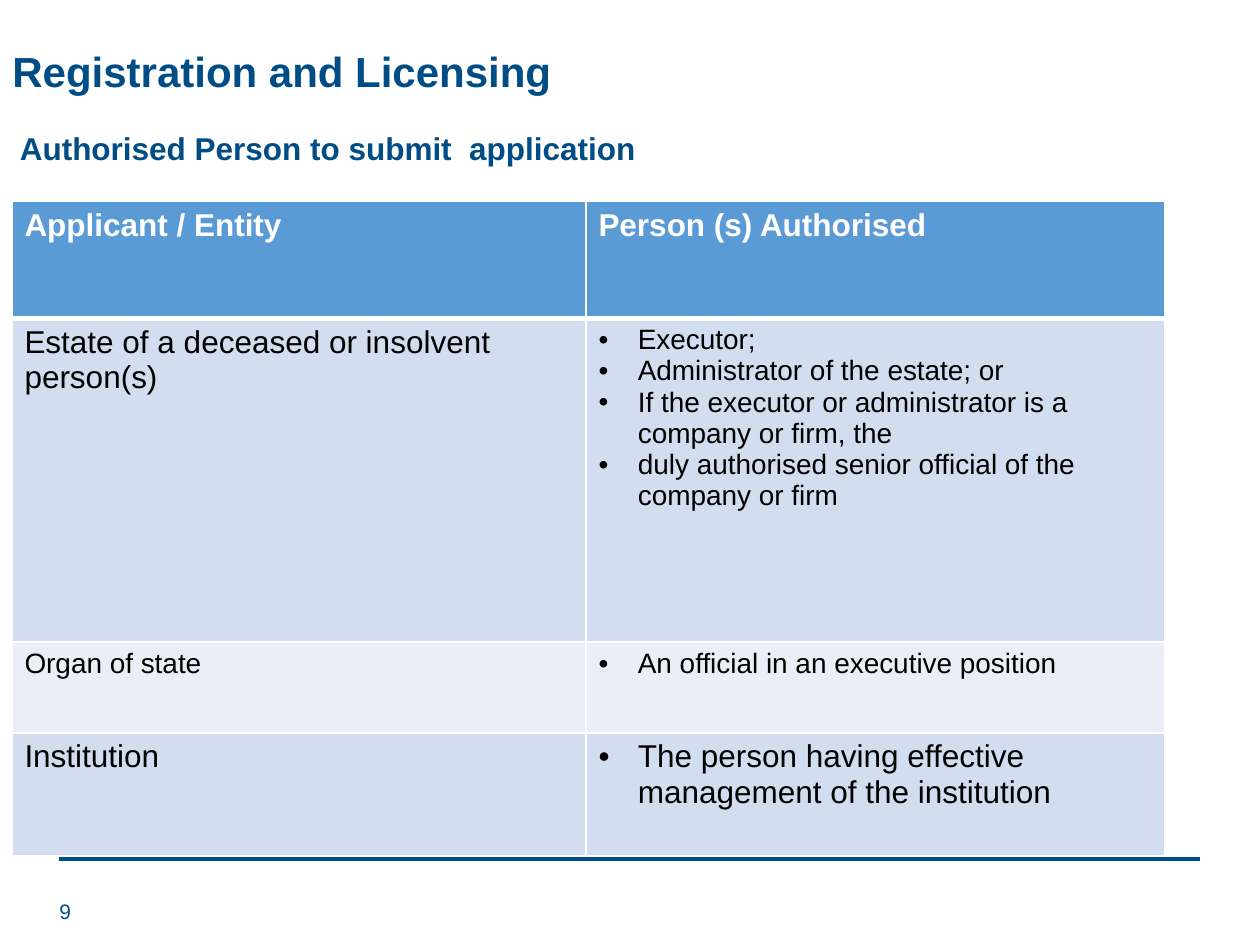
from lxml import etree
from pptx import Presentation, util as u
from pptx.dml.color import RGBColor
from pptx.enum import shapes, text
from pptx.oxml.ns import qn

Pt = u.Pt
COLOURS = {"navy": "004C85", "header": "5B9BD5", "band": "D2DEEF",
           "light": "EAEFF7", "white": "FFFFFF", "black": "000000"}


def rgb(name):
    return RGBColor.from_string(COLOURS[name])


class SlideBuilder:
    font_name = "Arial"
    bullet_indent = Pt(22.5)

    def __init__(self, slide):
        self.slide = slide

    def style(self, paragraph, size, colour, bold=False):
        font = paragraph.font
        font.name, font.size, font.bold = self.font_name, Pt(size), bold
        font.color.rgb = rgb(colour)

    def label(self, words, box, size, bold=False, inset=(7.2, 3.6),
              anchor=text.MSO_ANCHOR.TOP, spacing=1.0):
        frame = self.slide.shapes.add_textbox(*map(Pt, box)).text_frame
        frame.word_wrap = True
        frame.vertical_anchor = anchor
        frame.margin_left = frame.margin_right = Pt(inset[0])
        frame.margin_top = frame.margin_bottom = Pt(inset[1])
        frame.text = words
        line = frame.paragraphs[0]
        line.line_spacing = spacing
        self.style(line, size, "navy", bold)

    def rule(self, left, right, y, width):
        rule = self.slide.shapes.add_connector(
            shapes.MSO_CONNECTOR.STRAIGHT, Pt(left), Pt(y), Pt(right), Pt(y))
        rule.line.color.rgb = rgb("navy")
        rule.line.width = Pt(width)
        etree.SubElement(rule._element.spPr, qn("a:effectLst"))

    def bullet(self, paragraph):
        properties = paragraph._p.get_or_add_pPr()
        properties.set("marL", str(self.bullet_indent))
        properties.set("indent", str(-self.bullet_indent))
        etree.SubElement(properties, qn("a:buFont"), typeface="Arial")
        etree.SubElement(properties, qn("a:buChar"), char="•")

    def borders(self, cell, **widths):
        """Draw white cell borders; widths are given per side: L, R, T, B."""
        properties = cell._tc.get_or_add_tcPr()
        for side, width in widths.items():
            line = etree.SubElement(properties, qn(f"a:ln{side}"), w=str(Pt(width)))
            fill = etree.SubElement(line, qn("a:solidFill"))
            etree.SubElement(fill, qn("a:srgbClr"), val=COLOURS["white"])

    def cell(self, cell, lines, size, fill, header=False, bulleted=False, top=1):
        self.borders(cell, L=1, R=1, T=top, B=3 if header else 1)
        cell.fill.solid()
        cell.fill.fore_color.rgb = rgb(fill)
        cell.text_frame.text = "\n".join(lines)
        for paragraph in cell.text_frame.paragraphs:
            if bulleted:
                self.bullet(paragraph)
            self.style(paragraph, size, "white" if header else "black", header)

    def table(self, left, top, widths, heights, rows):
        """Fill a two-column table; each row is (entity, persons, sizes)."""
        table = self.slide.shapes.add_table(
            len(rows), len(widths), Pt(left), Pt(top),
            Pt(sum(widths)), Pt(sum(heights))).table
        for column, width in zip(table.columns, widths):
            column.width = Pt(width)
        for r, (entity, persons, sizes) in enumerate(rows):
            table.rows[r].height = Pt(heights[r])
            fill = "header" if r == 0 else ("light", "band")[r % 2]
            for c, lines in enumerate((entity, persons)):
                self.cell(table.cell(r, c), lines, sizes[c], fill, header=r == 0,
                          bulleted=r > 0 and c == 1, top=3 if r == 1 else 1)


def main():
    deck = Presentation()
    deck.slide_width, deck.slide_height = Pt(720), Pt(540)
    page = SlideBuilder(deck.slides.add_slide(deck.slide_layouts[6]))

    page.rule(34, 686, 491, 2)
    page.label("Registration and Licensing", (0, 23, 720, 42), 24, bold=True,
               inset=(7.2, 6), spacing=0.9)
    page.label("9", (34, 506, 162, 29), 12, inset=(0, 3.6),
               anchor=text.MSO_ANCHOR.MIDDLE)
    page.label("Authorised Person to submit  application", (4.3, 70, 369, 29),
               18, bold=True)

    applicants = [
        (["Applicant / Entity"], ["Person (s) Authorised"], (18, 18)),
        (["Estate of a deceased or insolvent", "person(s)"],
         ["Executor;",
          "Administrator of the estate; or",
          "If the executor or administrator is a company or firm, the",
          "duly authorised senior official of the company or firm"], (18, 16)),
        (["Organ of state"], ["An official in an executive position"], (16, 16)),
        (["Institution"],
         ["The person having effective management of the institution"], (18, 18)),
    ]
    page.table(6.8, 115.2, (328, 331), (66.7, 185, 52, 70), applicants)
    deck.save("out.pptx")


if __name__ == "__main__":
    main()
